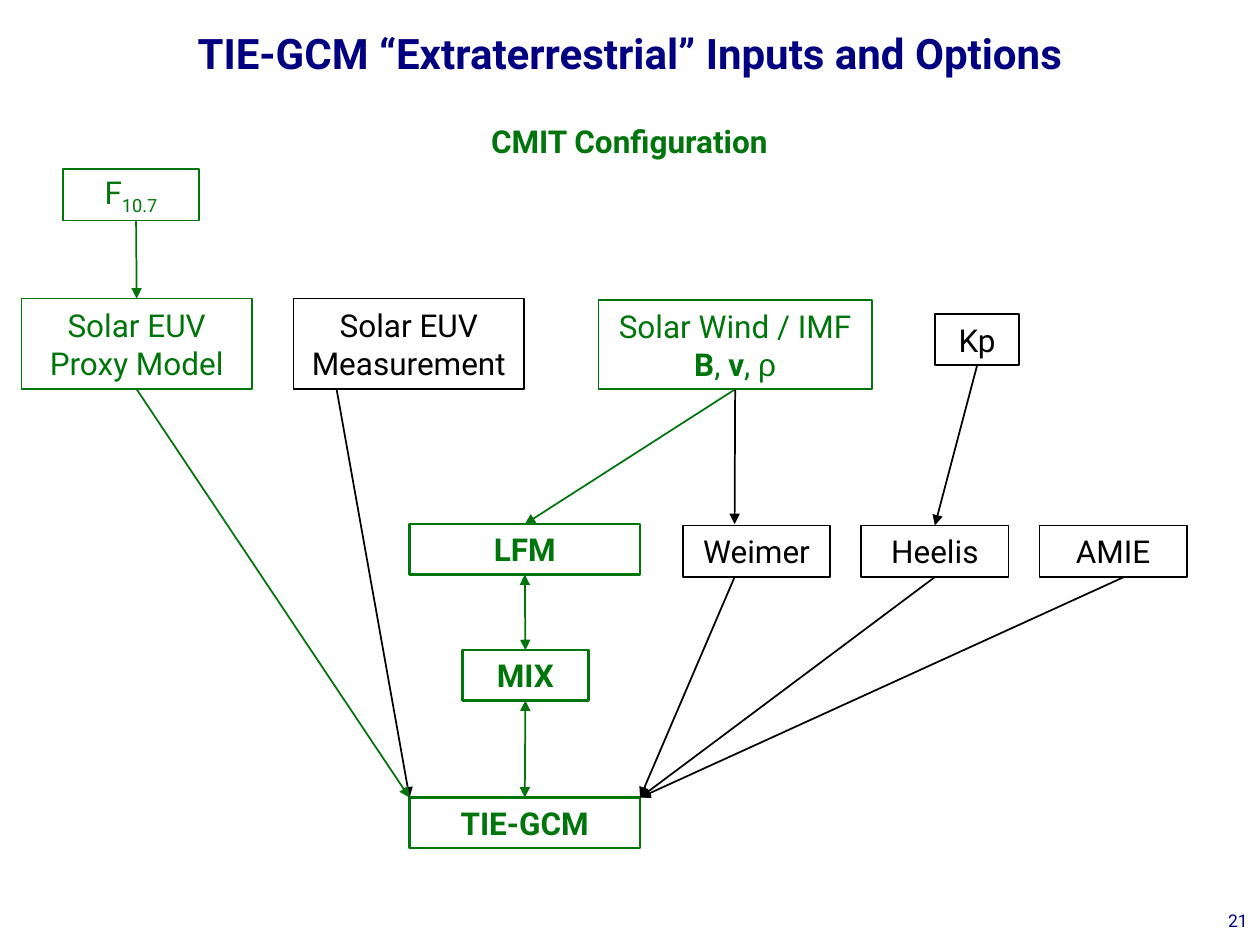
from lxml import etree
from pptx import Presentation
from pptx.dml.color import RGBColor
from pptx.enum.shapes import MSO_CONNECTOR, MSO_SHAPE
from pptx.enum.text import MSO_ANCHOR, PP_ALIGN
from pptx.oxml.ns import qn
from pptx.util import Inches, Pt

RECT = MSO_SHAPE.RECTANGLE
STRAIGHT = MSO_CONNECTOR.STRAIGHT
CENTER, RIGHT = PP_ALIGN.CENTER, PP_ALIGN.RIGHT
TOP_ANCHOR, MIDDLE = MSO_ANCHOR.TOP, MSO_ANCHOR.MIDDLE
TOP, BOTTOM = 0, 2

GREEN, BLACK, NAVY = "00750B", "000000", "000080"


def rgb(value):
    return RGBColor.from_string(value)


class Diagram:
    font = "Roboto"
    size = 18

    def __init__(self, slide):
        self.s = slide

    def format_text(self, sp, color, size=None, bold=False,
                    align=CENTER, anchor=MIDDLE):
        tf = sp.text_frame
        tf.word_wrap = True
        tf.vertical_anchor = anchor
        tf.margin_left = tf.margin_right = Inches(0.1)
        tf.margin_top = tf.margin_bottom = Inches(0.05)
        p = tf.paragraphs[0]
        p.alignment = align
        for r in p.runs:
            r.font.name = self.font
            r.font.size = Pt(size or self.size)
            r.font.bold = bold
            r.font.color.rgb = rgb(color)

    def title(self, text, x, y, w, h):
        sp = self.s.shapes.title
        sp.left, sp.top, sp.width, sp.height = map(Inches, (x, y, w, h))
        sp.text_frame.text = text
        self.format_text(sp, NAVY, size=24, bold=True)

    def label(self, text, x, y, w, h, color, **style):
        sp = self.s.shapes.add_textbox(*map(Inches, (x, y, w, h)))
        sp.text_frame.text = text
        self.format_text(sp, color, **style)

    def box(self, parts, x, y, w, h, color=BLACK, bold=False):
        """Outlined box; parts is one text, or a list of run texts."""
        sp = self.s.shapes.add_shape(RECT, *map(Inches, (x, y, w, h)))
        sp.shadow.inherit = False
        sp.fill.background()
        sp.line.color.rgb = rgb(color)
        sp.line.width = Pt(1.5 if bold else 1)
        p = sp.text_frame.paragraphs[0]
        for part in [parts] if isinstance(parts, str) else parts:
            p.add_run().text = part
        self.format_text(sp, color, bold=bold)
        return sp

    def arrow(self, start, end, color=BLACK, both=False):
        """Each end is a point (x, y) or a joint (box, side)."""
        joints = [not isinstance(e[0], (int, float)) for e in (start, end)]
        ends = [(0, 0) if joined else e
                for e, joined in zip((start, end), joints)]
        c = self.s.shapes.add_connector(
            STRAIGHT, *(Inches(v) for e in ends for v in e))
        if joints[0]:
            c.begin_connect(*start)
        if joints[1]:
            c.end_connect(*end)
        c.line.color.rgb = rgb(color)
        c.line.width = Pt(1)
        ln = c.line._get_or_add_ln()
        for tag in ("a:headEnd", "a:tailEnd") if both else ("a:tailEnd",):
            etree.SubElement(ln, qn(tag), type="triangle")
        etree.SubElement(c._element.spPr, qn("a:effectLst"))


def main():
    prs = Presentation()
    prs.slide_width, prs.slide_height = Inches(10), Inches(7.5)
    d = Diagram(prs.slides.add_slide(prs.slide_layouts[5]))

    # Headings and page number
    d.title("TIE-GCM “Extraterrestrial” Inputs and Options", 0, 0.17, 10, 0.5)
    d.label("CMIT Configuration", 2.12, 0.92, 5.75, 0.4, GREEN, bold=True)
    d.label("21", 7.92, 7.17, 2.08, 0.33, NAVY, size=10,
            align=RIGHT, anchor=TOP_ANCHOR)

    # Inputs
    f107 = d.box(["F", "10.7"], 0.5, 1.34, 1.08, 0.41, GREEN)
    subscript = f107.text_frame.paragraphs[0].runs[1]
    subscript._r.get_or_add_rPr().set("baseline", "-25000")
    proxy = d.box("Solar EUV Proxy Model", 0.17, 2.37, 1.83, 0.72, GREEN)
    d.box("Solar EUV Measurement", 2.33, 2.37, 1.83, 0.72)
    wind = d.box(["Solar Wind / IMF ", "B", ", ", "v", ", ", "ρ"],
                 4.75, 2.38, 2.17, 0.71, GREEN)
    runs = wind.text_frame.paragraphs[0].runs
    runs[1].font.bold = runs[3].font.bold = True
    runs[5].font.name = "Arial"
    kp = d.box("Kp", 7.42, 2.49, 0.67, 0.41)

    # Convection models, equally spaced
    weimer, heelis, amie = [
        d.box(name, 5.42 + 1.415 * i, 4.17, 1.17, 0.41)
        for i, name in enumerate(("Weimer", "Heelis", "AMIE"))]

    # Coupled models
    lfm = d.box("LFM", 3.25, 4.16, 1.83, 0.4, GREEN, bold=True)
    mix = d.box("MIX", 3.67, 5.16, 1, 0.4, GREEN, bold=True)
    tiegcm = d.box("TIE-GCM", 3.25, 6.33, 1.83, 0.4, GREEN, bold=True)
    left_corner, right_corner = (3.25, 6.33), (5.08, 6.33)

    # Arrows from the inputs
    d.arrow((1.08, 1.75), (proxy, TOP), GREEN)
    d.arrow((2.67, 3.08), left_corner)
    d.arrow((proxy, BOTTOM), left_corner, GREEN)
    d.arrow((wind, BOTTOM), (lfm, TOP), GREEN)
    d.arrow((wind, BOTTOM), (5.83, 4.16))
    d.arrow((kp, BOTTOM), (heelis, TOP))

    # Arrows into TIE-GCM
    for start in ((5.83, 4.58), (heelis, BOTTOM), (8.92, 4.58)):
        d.arrow(start, right_corner)

    # Two-way coupling
    for upper, lower in ((lfm, mix), (mix, tiegcm)):
        d.arrow((upper, BOTTOM), (lower, TOP), GREEN, both=True)

    prs.save("out.pptx")


if __name__ == "__main__":
    main()
